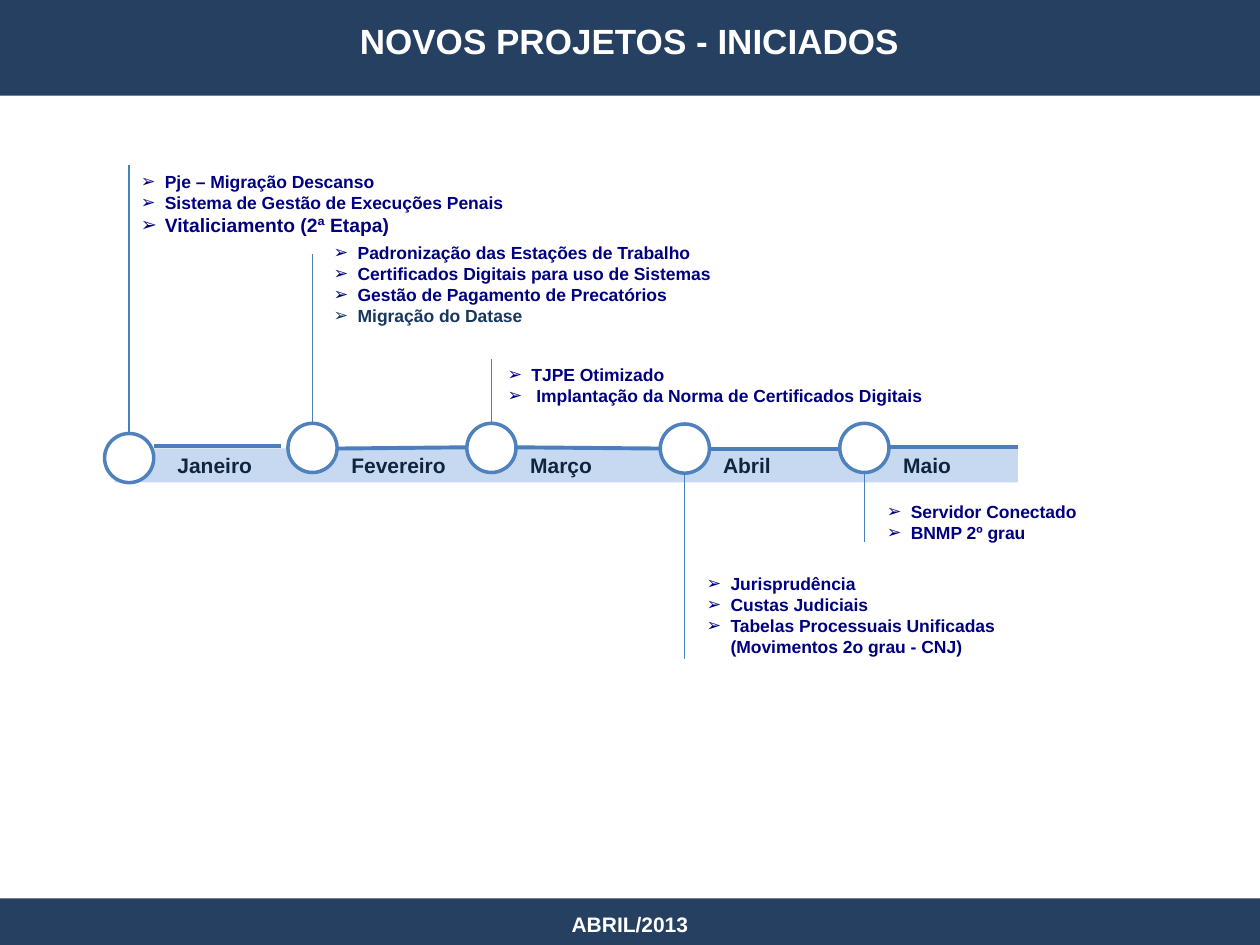
"""Build a timeline slide of the new projects begun each month."""
from dataclasses import dataclass

from lxml import etree
from pptx import Presentation
from pptx.dml.color import RGBColor
from pptx.enum.shapes import MSO_CONNECTOR, MSO_SHAPE
from pptx.enum.text import MSO_ANCHOR, PP_ALIGN
from pptx.oxml.ns import qn
from pptx.util import Inches, Pt

RECT, OVAL = MSO_SHAPE.RECTANGLE, MSO_SHAPE.OVAL
LINE = MSO_CONNECTOR.STRAIGHT
TOP, MIDDLE = MSO_ANCHOR.TOP, MSO_ANCHOR.MIDDLE
LEFT, CENTER = PP_ALIGN.LEFT, PP_ALIGN.CENTER
WIDE, HIGH = Inches(10), Inches(7.5)
COLS, ROWS = 100, 75
RING = 3.9


@dataclass(frozen=True)
class Theme:
    font: str = "Arial"
    bar: str = "254061"
    band: str = "C6D9F1"
    white: str = "FFFFFF"
    ring: str = "4F81BD"
    line: str = "4B7EBC"
    month: str = "0F243E"
    item: str = "000080"
    muted: str = "17375E"
    title: int = 20
    label: int = 12
    big: int = 11
    body: int = 10
    thin: float = 0.75
    thick: float = 2.25
    edge: float = 2


THEME = Theme()


@dataclass(frozen=True)
class Item:
    text: str
    size: int = THEME.body
    color: str = THEME.item


@dataclass(frozen=True)
class Month:
    name: str
    x: float
    y: float
    label: float
    rule: tuple[float, float, float]
    stem: float
    box: tuple[float, float, float, float]
    items: tuple[Item, ...]


MONTHS = (
    Month("Janeiro", 10.25, 36.35, 13.1, (35.4, 22.3, 35.4), 13.1,
          (10.2, 13.1, 33.7, 5.9),
          (Item("Pje – Migração Descanso"),
           Item("Sistema de Gestão de Execuções Penais"),
           Item("Vitaliciamento (2ª Etapa)", size=THEME.big))),
    Month("Fevereiro", 24.8, 35.55, 26.9, (35.6, 37, 35.5), 20.2,
          (25.5, 18.7, 39.9, 7),
          (Item("Padronização das Estações de Trabalho"),
           Item("Certificados Digitais para uso de Sistemas"),
           Item("Gestão de Pagamento de Precatórios"),
           Item("Migração do Datase", color=THEME.muted))),
    Month("Março", 39, 35.55, 41.1, (35.5, 52.4, 35.6), 28.5,
          (39.3, 28.4, 35.4, 4.3),
          (Item("TJPE Otimizado"),
           Item(" Implantação da Norma de Certificados Digitais"))),
    Month("Abril", 54.35, 35.6, 56.4, (35.6, 66.5, 35.6), 52.3,
          (55.1, 45, 26.4, 7.3),
          (Item("Jurisprudência"),
           Item("Custas Judiciais"),
           Item("Tabelas Processuais Unificadas (Movimentos 2o grau - CNJ)"))),
    Month("Maio", 68.6, 35.55, 70.7, (35.5, 80.8, 35.5), 43,
          (69.4, 39.3, 22.8, 3.7),
          (Item("Servidor Conectado"),
           Item("BNMP 2º grau"))),
)


def col(n: float) -> int:
    """Turn grid columns into a length."""
    return round(WIDE * n / COLS)


def row(n: float) -> int:
    """Turn grid rows into a length."""
    return round(HIGH * n / ROWS)


def area(x: float, y: float, w: float, h: float) -> tuple[int, ...]:
    """Turn a grid box into lengths."""
    return col(x), row(y), col(w), row(h)


def shade(run) -> None:
    """Give the letters of a run a soft shadow."""
    fx = etree.Element(qn("a:effectLst"))
    cast = etree.SubElement(fx, qn("a:outerShdw"), blurRad="38100",
                            dist="38100", dir="2700000")
    tint = etree.SubElement(cast, qn("a:srgbClr"), val="000000")
    etree.SubElement(tint, qn("a:alpha"), val="43000")
    run.font.fill._xPr.find(qn("a:solidFill")).addnext(fx)


def write(para, text: str, *, size: int, color: str, align=LEFT,
          bullet: str = "", shadow: bool = False) -> None:
    """Fill a paragraph with formatted text."""
    if bullet:
        props = para._p.get_or_add_pPr()
        props.set("marL", str(Inches(0.19)))
        props.set("indent", str(-Inches(0.19)))
        etree.SubElement(props, qn("a:buFont"), typeface=THEME.font)
        etree.SubElement(props, qn("a:buChar"), char=bullet)
    para.alignment = align
    run = para.add_run()
    run.text = text
    font = run.font
    font.name, font.size, font.bold = THEME.font, Pt(size), True
    font.color.rgb = RGBColor.from_string(color)
    if shadow:
        shade(run)


def frame(slide, box: tuple[float, ...], anchor=TOP):
    """Add a wrapping text box and return its frame."""
    text = slide.shapes.add_textbox(*area(*box)).text_frame
    text.word_wrap, text.vertical_anchor = True, anchor
    return text


def block(slide, kind, box: tuple[float, ...], fill: str, edge: str = "") -> None:
    """Add a flat shape, with an outline if an edge colour is given."""
    shape = slide.shapes.add_shape(kind, *area(*box))
    shape.shadow.inherit = False
    shape.fill.solid()
    shape.fill.fore_color.rgb = RGBColor.from_string(fill)
    if edge:
        shape.line.color.rgb = RGBColor.from_string(edge)
        shape.line.width = Pt(THEME.edge)
    else:
        shape.line.fill.background()


def stroke(slide, x: float, y: float, to_x: float, to_y: float,
           width: float) -> None:
    """Add a straight line without a shadow."""
    line = slide.shapes.add_connector(LINE, col(x), row(y), col(to_x), row(to_y))
    line.line.color.rgb = RGBColor.from_string(THEME.line)
    line.line.width = Pt(width)
    etree.SubElement(line.element.spPr, qn("a:effectLst"))


def draw(slide, month: Month) -> None:
    """Draw one month with its ring, lines, label and list."""
    half = RING / 2
    side = half if month.stem > month.y else -half
    start, end, level = month.rule
    stroke(slide, month.x, month.y + side, month.x, month.stem, THEME.thin)
    block(slide, OVAL, (month.x - half, month.y - half, RING, RING),
          THEME.white, THEME.ring)
    stroke(slide, month.x + half, start, end, level, THEME.thick)
    label = frame(slide, (month.label, 35.55, 10.1, 2.7), MIDDLE)
    write(label.paragraphs[0], month.name, size=THEME.label, color=THEME.month)
    text = frame(slide, month.box)
    for i, item in enumerate(month.items):
        para = text.add_paragraph() if i else text.paragraphs[0]
        write(para, item.text, size=item.size, color=item.color, bullet="➢")


def main() -> None:
    """Build and save the slide."""
    deck = Presentation()
    deck.slide_width, deck.slide_height = WIDE, HIGH
    slide = deck.slides.add_slide(deck.slide_layouts[5])
    block(slide, RECT, (0, 71.3, COLS, 3.7), THEME.bar)
    block(slide, RECT, (0, 0, COLS, 7.6), THEME.bar)
    foot = frame(slide, (0, 71.4, COLS, 3.9), MIDDLE)
    write(foot.paragraphs[0], "ABRIL/2013", size=THEME.label,
          color=THEME.white, align=CENTER, shadow=True)
    title = slide.shapes.title
    title.element.getparent().append(title.element)
    title.left, title.top, title.width, title.height = area(5, 0.5, 89.9, 5.5)
    title.text_frame.vertical_anchor = MIDDLE
    write(title.text_frame.paragraphs[0], "NOVOS PROJETOS - INICIADOS",
          size=THEME.title, color=THEME.white, align=CENTER, shadow=True)
    block(slide, RECT, (9.1, 35.6, 71.7, 2.7), THEME.band)
    for month in MONTHS:
        draw(slide, month)
    deck.save("out.pptx")


if __name__ == "__main__":
    main()
